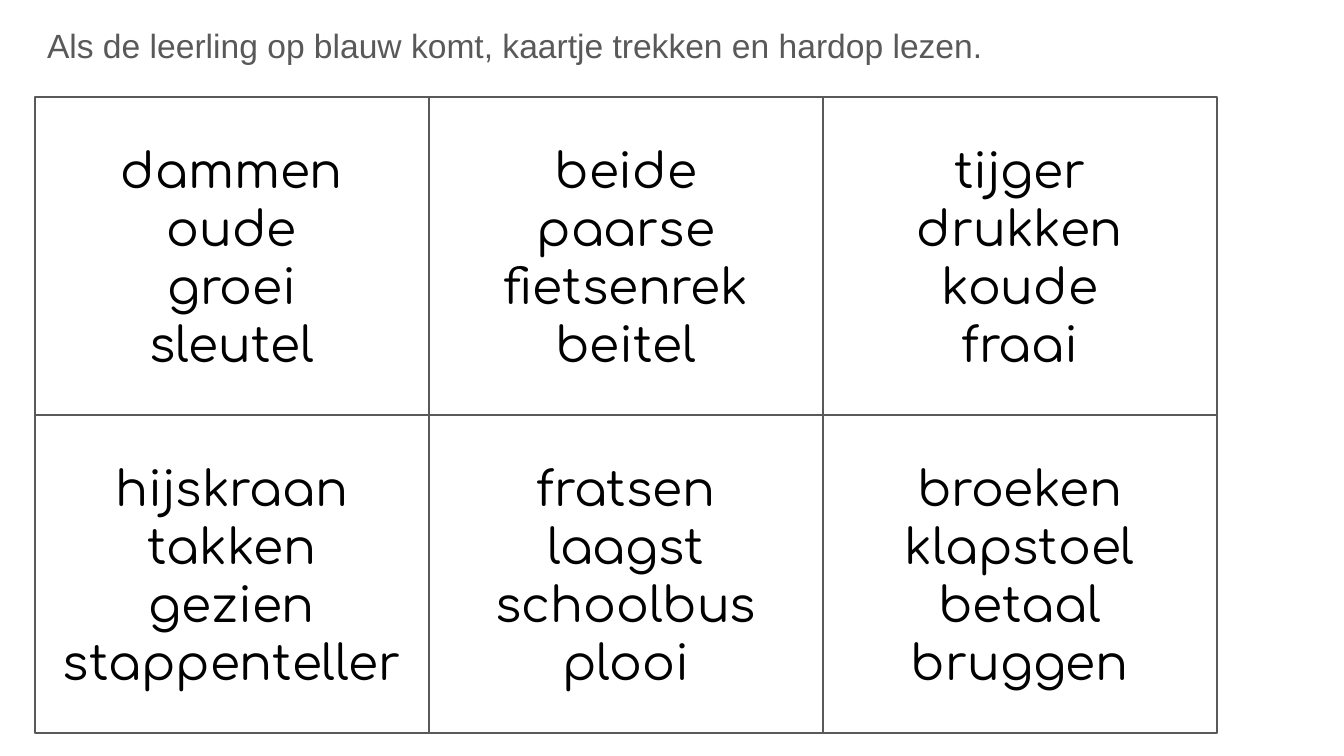
from dataclasses import dataclass

from pptx import Presentation
from pptx.dml.color import RGBColor
from pptx.enum.shapes import MSO_SHAPE as Preset
from pptx.enum.text import MSO_ANCHOR as Anchor, PP_ALIGN as Align
from pptx.util import Emu, Pt

PX_PER_INCH = 134.4
COLORS = {"paper": "FFFFFF", "gray": "595959", "word": "000000"}
CARD_LEFT, CARD_TOP = 35, 97
CARD_WIDTH, CARD_HEIGHT = 394, 318
INSET = 13


@dataclass(frozen=True)
class TextStyle:
    font: str
    size: int
    color: str
    align: Align
    anchor: Anchor


@dataclass(frozen=True)
class WordCard:
    column: int
    row: int
    words: tuple[str, ...]


INSTRUCTION_STYLE = TextStyle("Arial", 18, "gray", Align.LEFT, Anchor.TOP)
WORD_STYLE = TextStyle("Comfortaa", 26, "word", Align.CENTER, Anchor.MIDDLE)

CARDS = (
    WordCard(0, 0, ("dammen", "oude", "groei", "sleutel")),
    WordCard(2, 0, ("tijger", "drukken", "koude", "fraai")),
    WordCard(1, 0, ("beide", "paarse", "fietsenrek", "beitel")),
    WordCard(2, 1, ("broeken", "klapstoel", "betaal", "bruggen")),
    WordCard(1, 1, ("fratsen", "laagst", "schoolbus", "plooi")),
    WordCard(0, 1, ("hijskraan", "takken", "gezien", "stappenteller")),
)


def px(length: int) -> Emu:
    return Emu(round(length * 914400 / PX_PER_INCH))


def color(name: str) -> RGBColor:
    return RGBColor.from_string(COLORS[name])


def write_lines(frame, lines: tuple[str, ...], style: TextStyle) -> None:
    frame.word_wrap = True
    frame.vertical_anchor = style.anchor
    frame.margin_left = frame.margin_right = px(INSET)
    frame.margin_top = frame.margin_bottom = px(INSET)
    for index, line in enumerate(lines):
        paragraph = frame.add_paragraph() if index else frame.paragraphs[0]
        paragraph.alignment = style.align
        run = paragraph.add_run()
        run.text = line
        run.font.name = style.font
        run.font.size = Pt(style.size)
        run.font.color.rgb = color(style.color)


def draw_card(slide, card: WordCard) -> None:
    outline = slide.shapes.add_shape(
        Preset.RECTANGLE,
        px(CARD_LEFT + card.column * CARD_WIDTH),
        px(CARD_TOP + card.row * CARD_HEIGHT),
        px(CARD_WIDTH),
        px(CARD_HEIGHT),
    )
    outline.shadow.inherit = False
    outline.fill.solid()
    outline.fill.fore_color.rgb = color("paper")
    outline.line.color.rgb = color("gray")
    outline.line.width = Pt(0.75)
    write_lines(outline.text_frame, card.words, WORD_STYLE)


def main() -> None:
    deck = Presentation()
    deck.slide_width, deck.slide_height = px(1344), px(756)
    slide = deck.slides.add_slide(deck.slide_layouts[6])

    instruction = slide.shapes.add_textbox(px(34), px(12), px(1185), px(73))
    write_lines(
        instruction.text_frame,
        ("Als de leerling op blauw komt, kaartje trekken en hardop lezen.",),
        INSTRUCTION_STYLE,
    )
    for card in CARDS:
        draw_card(slide, card)

    deck.save("out.pptx")


if __name__ == "__main__":
    main()
